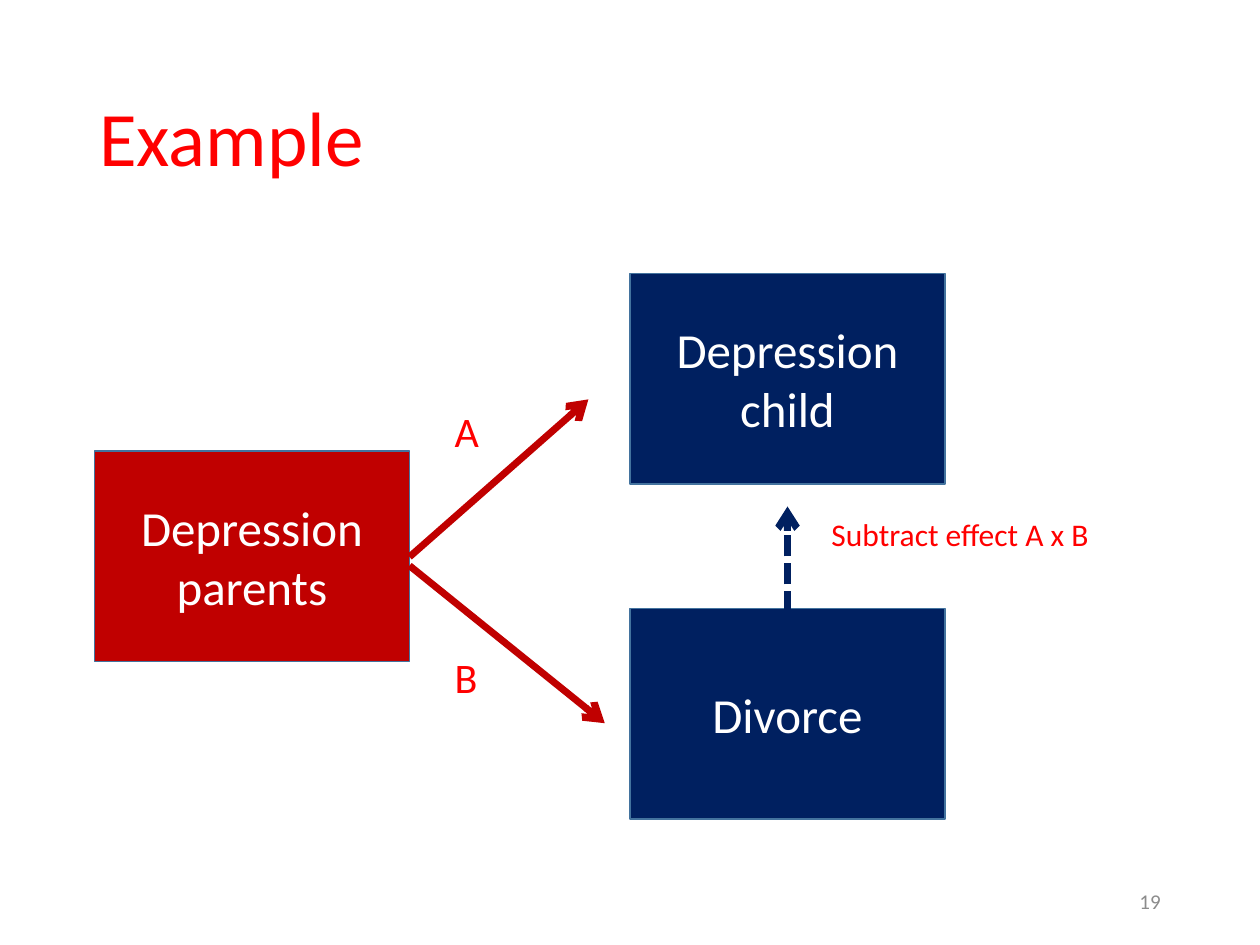
from lxml import etree
from pptx import Presentation
from pptx.dml.color import RGBColor
from pptx.enum.dml import MSO_LINE
from pptx.enum.shapes import MSO_CONNECTOR, MSO_SHAPE
from pptx.enum.text import MSO_ANCHOR, PP_ALIGN
from pptx.oxml.ns import qn
from pptx.util import Inches, Pt

COLORS = {
    "red": "FF0000",
    "dark_red": "C00000",
    "navy": "002060",
    "outline": "43739E",
    "white": "FFFFFF",
    "gray": "8C8C8C",
}
BOX_WIDTH, BOX_HEIGHT = 2.5, 1.67


def color(name):
    return RGBColor.from_string(COLORS[name])


def write_text(shape, text, size, font_color="red", align=PP_ALIGN.LEFT,
               anchor=MSO_ANCHOR.TOP, line_spacing=1.0):
    frame = shape.text_frame
    frame.word_wrap = True
    frame.vertical_anchor = anchor
    paragraph = frame.paragraphs[0]
    paragraph.alignment = align
    paragraph.line_spacing = line_spacing
    run = paragraph.add_run()
    run.text = text
    run.font.name = "Calibri"
    run.font.size = Pt(size)
    run.font.color.rgb = color(font_color)


presentation = Presentation()
presentation.slide_width = Inches(10)
presentation.slide_height = Inches(7.5)
slide = presentation.slides.add_slide(presentation.slide_layouts[6])

# Boxes of the diagram
for text, left, top, fill in [
    ("Depression child", 5, 2.17, "navy"),
    ("Divorce", 5, 4.83, "navy"),
    ("Depression parents", 0.75, 3.58, "dark_red"),
]:
    box = slide.shapes.add_shape(MSO_SHAPE.RECTANGLE, Inches(left), Inches(top),
                                 Inches(BOX_WIDTH), Inches(BOX_HEIGHT))
    box.shadow.inherit = False
    box.fill.solid()
    box.fill.fore_color.rgb = color(fill)
    box.line.color.rgb = color("outline")
    box.line.width = Pt(1)
    write_text(box, text, 28, font_color="white", align=PP_ALIGN.CENTER,
               anchor=MSO_ANCHOR.MIDDLE)

# Arrows between the boxes
for start_x, start_y, end_x, end_y, line_color, dash in [
    (3.25, 4.42, 4.67, 3.17, "dark_red", None),
    (3.25, 4.49, 4.8, 5.74, "dark_red", None),
    (6.25, 4.86, 6.25, 4.02, "navy", MSO_LINE.SQUARE_DOT),
]:
    arrow = slide.shapes.add_connector(MSO_CONNECTOR.STRAIGHT, Inches(start_x),
                                       Inches(start_y), Inches(end_x), Inches(end_y))
    arrow.line.color.rgb = color(line_color)
    arrow.line.width = Pt(4)
    if dash:
        arrow.line.dash_style = dash
    properties = arrow._element.spPr
    etree.SubElement(properties.find(qn("a:ln")), qn("a:tailEnd"), type="arrow")
    etree.SubElement(properties, qn("a:effectLst"))

# Title, labels and slide number
for text, left, top, width, height, size, text_format in [
    ("Example", 0.69, 0.4, 8.62, 1.45, 44,
     {"anchor": MSO_ANCHOR.MIDDLE, "line_spacing": 0.9}),
    ("Subtract effect A x B", 6.5, 4.04, 2.75, 0.4, 18, {}),
    ("A", 3.51, 3.17, 0.54, 0.5, 24, {}),
    ("B", 3.51, 5.12, 0.54, 0.5, 24, {}),
    ("19", 7.06, 6.95, 2.25, 0.4, 12,
     {"font_color": "gray", "align": PP_ALIGN.RIGHT, "anchor": MSO_ANCHOR.MIDDLE}),
]:
    text_box = slide.shapes.add_textbox(Inches(left), Inches(top),
                                        Inches(width), Inches(height))
    write_text(text_box, text, size, **text_format)

presentation.save("out.pptx")
